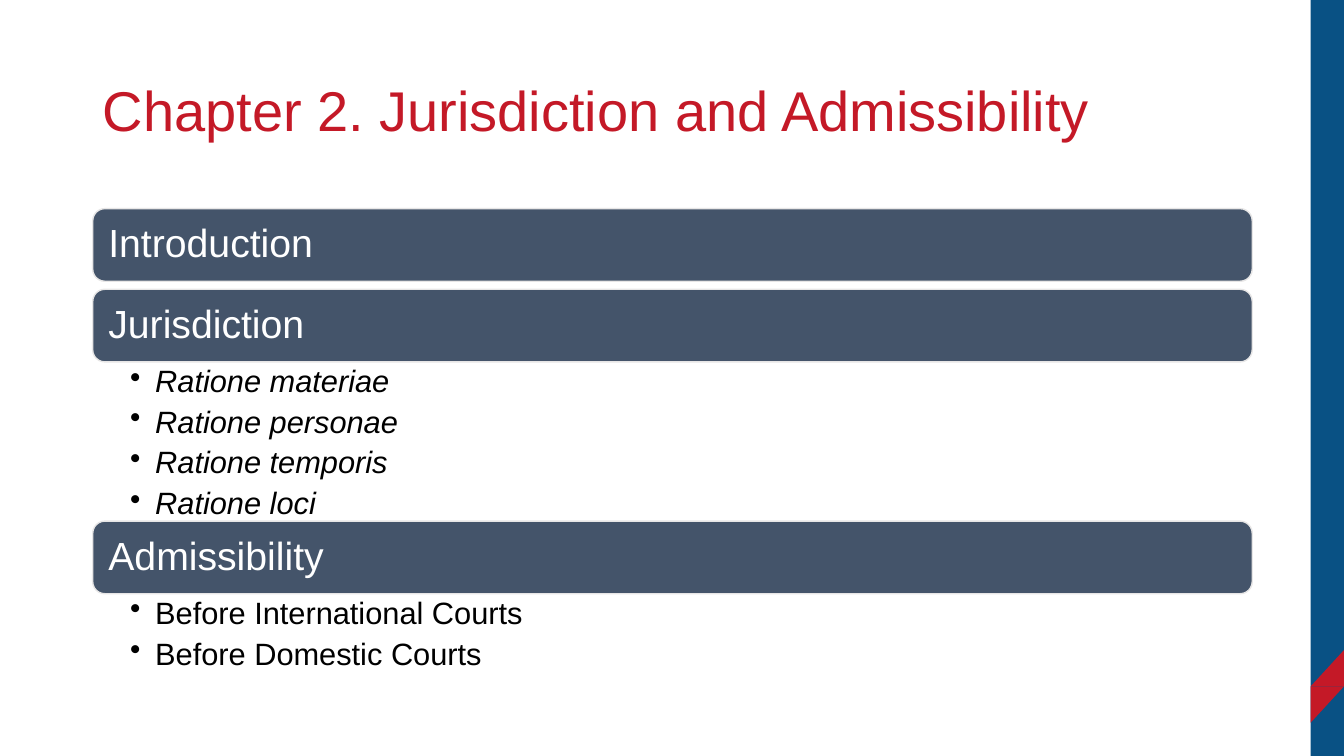
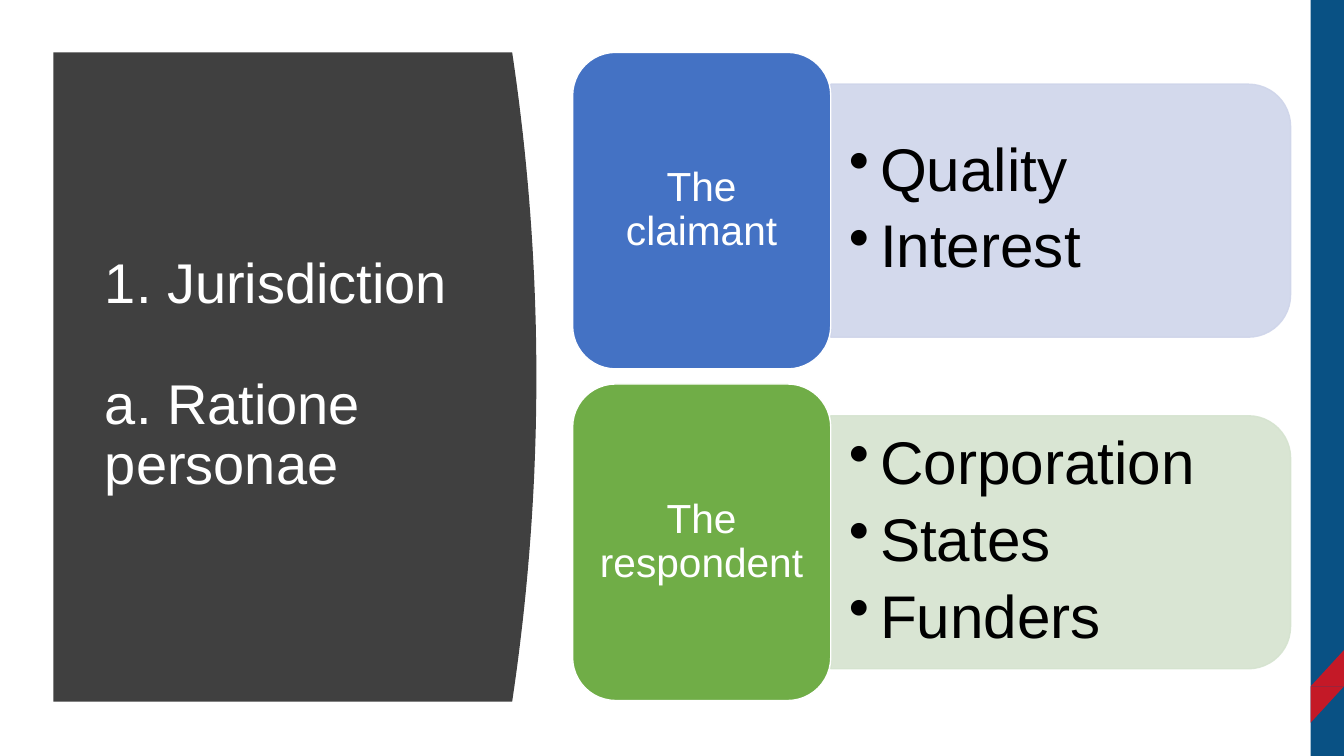
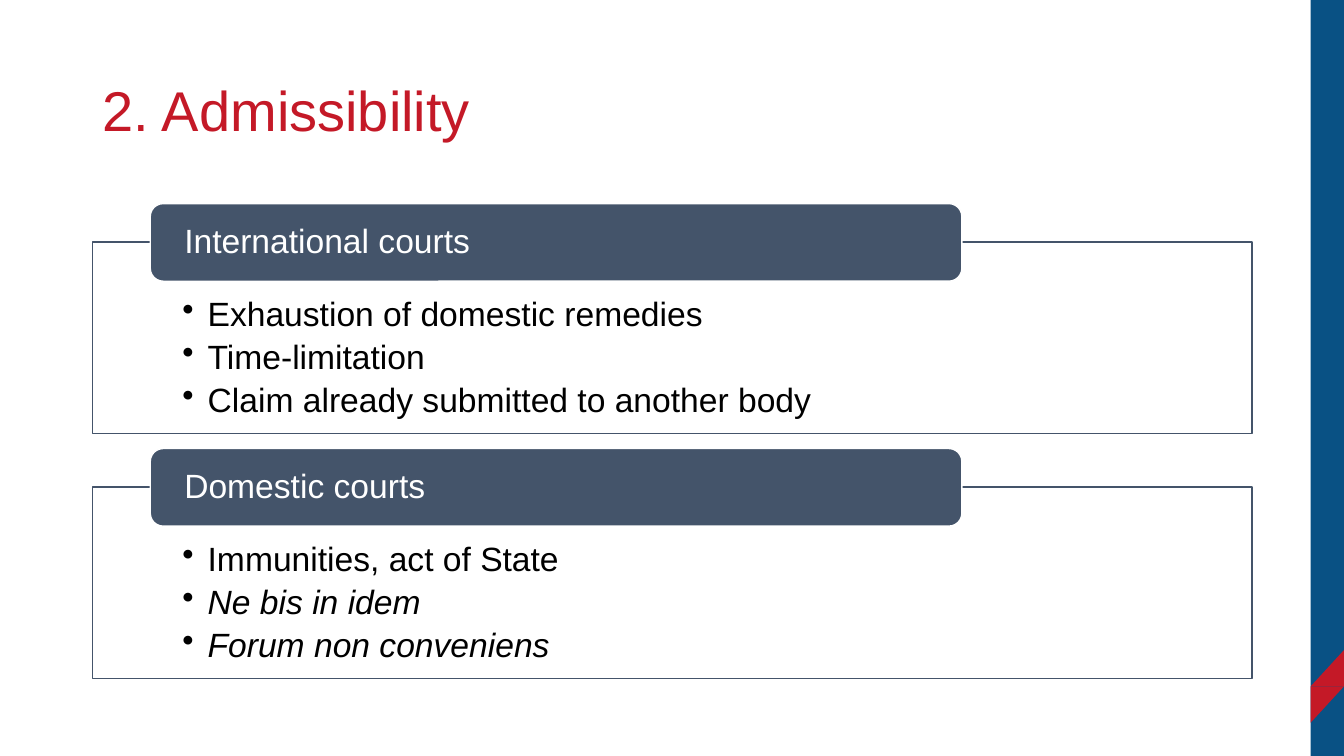
from lxml import etree
from pptx import Presentation
from pptx.dml.color import RGBColor
from pptx.enum.shapes import MSO_SHAPE
from pptx.enum.text import MSO_ANCHOR, PP_ALIGN
from pptx.oxml.ns import qn
from pptx.util import Inches, Pt

RECT, ROUND = MSO_SHAPE.RECTANGLE, MSO_SHAPE.ROUNDED_RECTANGLE
ROUND_TOP, TRIANGLE = MSO_SHAPE.ROUND_2_SAME_RECTANGLE, MSO_SHAPE.RIGHT_TRIANGLE
TOP, MIDDLE = MSO_ANCHOR.TOP, MSO_ANCHOR.MIDDLE
LEFT, CENTER = PP_ALIGN.LEFT, PP_ALIGN.CENTER

FONT = "Arial"
BLUE, RED, SLATE, CHARCOAL = "095184", "C41927", "44546A", "404040"
WHITE, BLACK, PALE = "FFFFFF", "000000", "E7E6E6"
TITLE_BOX = (0.92, 0.4, 11.5, 1.45)
BODY_LEFT, BODY_WIDTH = 0.92, 11.5

# Each bullet is (text, italic)
OUTLINE_TITLE = "Chapter 2. Jurisdiction and Admissibility"
OUTLINE = [
    ("Introduction", []),
    ("Jurisdiction", [("Ratione materiae", True), ("Ratione personae", True),
                      ("Ratione temporis", True), ("Ratione loci", True)]),
    ("Admissibility", [("Before International Courts", False),
                       ("Before Domestic Courts", False)]),
]
PARTIES_TITLE = ["1. Jurisdiction", "a. Ratione personae"]
PARTIES = [
    ("The claimant", "4472C4", "CFD5EA", [("Quality", False), ("Interest", False)]),
    ("The respondent", "70AD47", "D5E3CF",
     [("Corporation", False), ("States", False), ("Funders", False)]),
]
COURTS_TITLE = "2. Admissibility"
COURTS = [
    ("International courts", [("Exhaustion of domestic remedies", False),
                              ("Time-limitation", False),
                              ("Claim already submitted to another body", False)]),
    ("Domestic courts", [("Immunities, act of State", False),
                         ("Ne bis in idem", True),
                         ("Forum non conveniens", True)]),
]


def rgb(color):
    return RGBColor.from_string(color)


def paint(shape, fill, line=None, opacity=100):
    """Set fill and 1 pt outline, both with the same opacity in percent."""
    shape.shadow.inherit = False
    shape.fill.solid()
    shape.fill.fore_color.rgb = rgb(fill)
    if line:
        shape.line.color.rgb = rgb(line)
        shape.line.width = Pt(1)
    else:
        shape.line.fill.background()
    if opacity < 100:
        for color in shape.element.spPr.iter(qn("a:srgbClr")):
            etree.SubElement(color, qn("a:alpha")).set("val", str(opacity * 1000))


def add_block(slide, kind, box, fill, line=None, opacity=100):
    block = slide.shapes.add_shape(kind, *map(Inches, box))
    paint(block, fill, line, opacity)
    return block


def set_frame(shape, anchor, insets):
    frame = shape.text_frame
    frame.word_wrap = True
    frame.vertical_anchor = anchor
    (frame.margin_left, frame.margin_top,
     frame.margin_right, frame.margin_bottom) = map(Inches, insets)
    return frame


def write(frame, lines, size, color, align=LEFT, indent=0, after=0):
    """Write (text, italic) lines; an indent makes them bullets."""
    for index, (text, italic) in enumerate(lines):
        paragraph = frame.add_paragraph() if index else frame.paragraphs[0]
        if indent:
            props = paragraph._p.get_or_add_pPr()
            props.set("marL", str(Inches(indent)))
            props.set("indent", str(-Inches(indent)))
            etree.SubElement(props, qn("a:buChar")).set("char", "•")
        paragraph.alignment = align
        paragraph.line_spacing = 0.9
        if index < len(lines) - 1:
            paragraph.space_after = Pt(after)
        run = paragraph.add_run()
        run.text = text
        run.font.name = FONT
        run.font.size = Pt(size)
        run.font.italic = italic
        run.font.color.rgb = rgb(color)


def add_text(slide, box, anchor, insets, lines, **style):
    holder = slide.shapes.add_textbox(*map(Inches, box))
    write(set_frame(holder, anchor, insets), lines, **style)


def add_titled_slide(deck, lines, box=TITLE_BOX, color=RED):
    slide = deck.slides.add_slide(deck.slide_layouts[5])
    title = slide.shapes.title
    title.left, title.top, title.width, title.height = map(Inches, box)
    frame = set_frame(title, MIDDLE, (0.1, 0.05, 0.1, 0.05))
    write(frame, [(line, False) for line in lines], 40, color, after=43)
    return slide


def move_band_to_layout(slide):
    """Draw the side band once and hand it to the layout all slides share."""
    band_left, band_width, fold = 13, 0.33, 0.36
    parts = [add_block(slide, RECT, (band_left, 0, band_width, 7.5), BLUE)]
    for top, flip in [(6.81, "flipV"), (6.45, "flipH")]:
        corner = add_block(slide, TRIANGLE, (band_left, top, band_width, fold), RED)
        corner.element.spPr.find(qn("a:xfrm")).set(flip, "1")
        parts.append(corner)
    for part in parts:
        slide.slide_layout.shapes.element.append(part.element)


def build_outline(deck):
    slide = add_titled_slide(deck, [OUTLINE_TITLE])
    move_band_to_layout(slide)
    top, bar_height, gap, pair_height = 2.07, 0.72, 0.08, 0.79
    for heading, items in OUTLINE:
        bar = add_block(slide, ROUND, (BODY_LEFT, top, BODY_WIDTH, bar_height), SLATE, PALE)
        write(set_frame(bar, MIDDLE, (0.12,) * 4), [(heading, False)], 28, WHITE)
        top += bar_height
        if items:
            height = pair_height * len(items) / 2
            add_text(slide, (BODY_LEFT, top, BODY_WIDTH, height), TOP,
                     (0.37, 0.04, 0.22, 0.04), items,
                     size=22, color=BLACK, indent=0.25, after=5.3)
            top += height
        else:
            top += gap


def add_curved_panel(slide):
    """Draw the dark panel behind the title, its right side a shallow arc."""
    left, right, top, bottom, bulge, steps = 0.53, 5.08, 0.52, 6.96, 0.24, 40
    arc = []
    for step in range(steps + 1):
        t = step / steps
        arc.append((Inches(right + bulge * 4 * t * (1 - t)),
                    Inches(top + (bottom - top) * t)))
    outline = slide.shapes.build_freeform(Inches(left), Inches(top))
    outline.add_line_segments(arc + [(Inches(left), Inches(bottom))], close=True)
    panel = outline.convert_to_shape()
    paint(panel, CHARCOAL)
    slide.shapes.element.insert(2, panel.element)


def build_parties(deck):
    slide = add_titled_slide(deck, PARTIES_TITLE, (0.94, 1.11, 3.74, 5.24), WHITE)
    add_curved_panel(slide)
    left, first_top, pitch = 5.68, 0.52, 3.29
    width, height = 2.56, 3.14
    list_width, list_height = 4.56, 2.51
    list_left = left + width
    for index, (party, color, tint, items) in enumerate(PARTIES):
        top = first_top + index * pitch
        middle = top + height / 2
        # Turned a quarter, so its width and height change places
        backing = add_block(
            slide, ROUND_TOP,
            (list_left + (list_width - list_height) / 2, middle - list_width / 2,
             list_height, list_width), tint, tint, 90)
        backing.rotation = 90
        add_text(slide, (list_left, middle - 1.14, 4.44, 2.27), MIDDLE,
                 (0.18, 0.09, 0.18, 0.09), items,
                 size=43, color=BLACK, indent=0.31, after=8.4)
        card = add_block(slide, ROUND, (left, top, width, height), color, WHITE)
        write(set_frame(card, MIDDLE, (0.11, 0.06, 0.11, 0.06)),
              [(party, False)], 29, WHITE, CENTER)


def build_courts(deck):
    slide = add_titled_slide(deck, [COURTS_TITLE])
    first_top, pitch, tab_rise = 2.4, 2.43, 0.38
    for index, (court, items) in enumerate(COURTS):
        top = first_top + index * pitch
        frame = add_block(slide, RECT, (BODY_LEFT, top, BODY_WIDTH, 1.9), WHITE, SLATE, 90)
        # The outline stays solid
        for alpha in frame.element.spPr.find(qn("a:ln")).findall(".//" + qn("a:alpha")):
            alpha.getparent().remove(alpha)
        write(set_frame(frame, TOP, (0.89, 0.55, 0.89, 0.19)), items, 24, BLACK,
              indent=0.25, after=4.8)
        tab = add_block(slide, ROUND, (1.49, top - tab_rise, 8.05, 0.77), SLATE, WHITE)
        write(set_frame(tab, MIDDLE, (0.3, 0, 0.3, 0)), [(court, False)], 24, WHITE)


def main():
    deck = Presentation()
    deck.slide_width, deck.slide_height = Inches(13.33), Inches(7.5)
    build_outline(deck)
    build_parties(deck)
    build_courts(deck)
    deck.save("out.pptx")


if __name__ == "__main__":
    main()
